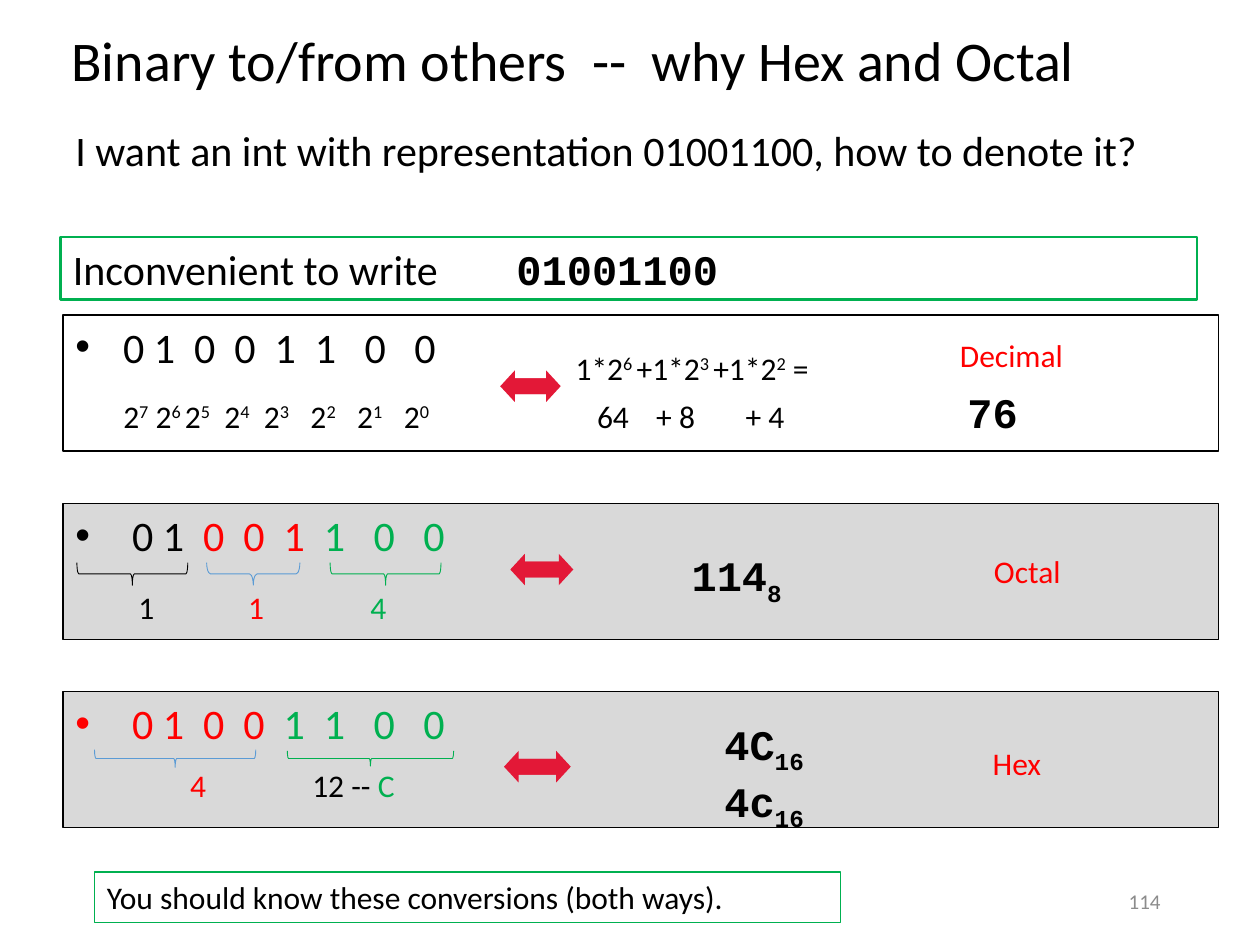
"""Build a slide on converting binary to decimal, octal and hexadecimal."""
import dataclasses

import pptx
import pptx.dml.color
import pptx.enum.shapes
import pptx.enum.text
import pptx.oxml
import pptx.oxml.ns
import pptx.util

SHAPES = pptx.enum.shapes.MSO_SHAPE
ALIGN = pptx.enum.text.PP_ALIGN
ANCHOR = pptx.enum.text.MSO_ANCHOR


@dataclasses.dataclass(frozen=True)
class Theme:
    black: str = "000000"
    red: str = "FF0000"
    green: str = "00B050"
    blue: str = "5B9BD5"
    gray: str = "D9D9D9"
    arrow: str = "E31837"
    muted: str = "8C8C8C"
    title: int = 32
    large: int = 24
    normal: int = 18
    small: int = 12
    sans: str = "Calibri"
    mono: str = "Courier New"


THEME = Theme()
INSET = 0.1
BAND_LEFT, BAND_TOP, BAND_WIDTH, BAND_HEIGHT, BAND_STEP = 0.5, 2.5, 9.17, 1.08, 1.495
ARROW_WIDTH, ARROW_HEIGHT = 0.42, 0.25


def run(text, size=THEME.normal, color=THEME.black, mono=False, base=0):
    font = {"size": pptx.util.Pt(size), "bold": mono, "name": THEME.mono if mono else THEME.sans}
    return text, font, color, base


def powers(*parts):
    return [run(part, base=30 * (index % 2)) for index, part in enumerate(parts)]


def mono(text, base=0):
    return run(text, THEME.large, mono=True, base=base)


def digits(text, color=THEME.black):
    return run(text, THEME.large, color)


def label(text, color=THEME.red):
    return [[run(text, color=color)]]


BANDS = [
    {
        "fill": None, "indent": 0.38, "arrows": (3.97, 4.03, 0.44),
        "digits": [digits("0 1  0  0  1  1   0   0")],
        "braces": [],
        "texts": [
            (0.98, 0.6, [powers("2", "7", " 2", "6 ", "2", "5", "  2", "4", "  2", "3",
                                "   2", "2", "   2", "1", "   2", "0")], ()),
            (4.57, 0.22, [powers("1*2", "6 ", "+1*2", "3 ", "+1*2", "2", " ="),
                          [run("\t64\t+ 8\t+ 4\t"), mono("76")]], (0.17, 0.64, 1.35, 3.11)),
            (7.62, 0.12, label("Decimal"), ()),
        ],
    },
    {
        "fill": THEME.gray, "indent": 0.45, "arrows": (4.05, 4.13, 0.4),
        "digits": [digits("0 1  "), digits("0  0  1  ", THEME.red),
                   digits("1   0   0", THEME.green)],
        "braces": [(1.05, 0.56, 0.88, 0.18, THEME.black, 0.083),
                   (2.01, 0.56, 0.74, 0.18, THEME.blue, 0.167),
                   (3.06, 0.56, 0.88, 0.18, THEME.green, 0.083)],
        "texts": [
            (1.1, 0.62, label("1", THEME.black), ()),
            (1.97, 0.62, label("1"), ()),
            (2.94, 0.62, label("4", THEME.green), ()),
            (5.49, 0.32, [[mono("114"), mono("8", -25)]], ()),
            (7.89, 0.34, label("Octal"), ()),
        ],
    },
    {
        "fill": THEME.gray, "indent": 0.45, "arrows": (4.0, 4.11, 0.47),
        "digits": [digits("0 1  0  0  ", THEME.red), digits("1  1   0   0", THEME.green)],
        "braces": [(1.39, 0.53, 1.28, 0.14, THEME.blue, 0.083),
                   (2.94, 0.53, 1.32, 0.12, THEME.green, 0.083)],
        "texts": [
            (1.51, 0.54, label("4"), ()),
            (2.48, 0.54, [[run("12 -- "), run("C", color=THEME.green)]], ()),
            (5.75, 0.16, [[mono(text), mono("16", -25)] for text in ("4C", "4c")], ()),
            (7.88, 0.37, label("Hex"), ()),
        ],
    },
]

BOXES = [
    ((0.47, -0.12, 9.17, 1.25), [run("Binary to/from others  --  why Hex and Octal", THEME.title)],
     None, {"line_spacing": 0.9}, ANCHOR.MIDDLE, ()),
    ((0.5, 0.94, 9.17, 0.5),
     [run("I want an int with representation 01001100, how to denote it?", THEME.large)],
     None, {}, ANCHOR.TOP, ()),
    ((0.48, 1.88, 9.02, 0.5), [run("Inconvenient to write\t", THEME.large), mono("01001100")],
     1.5, {}, ANCHOR.TOP, (3.52,)),
    ((0.75, 6.92, 5.92, 0.4), [run("You should know these conversions (both ways).")],
     0.75, {}, ANCHOR.TOP, ()),
    ((7.06, 6.95, 2.25, 0.4), [run("114", THEME.small, THEME.muted)],
     None, {"alignment": ALIGN.RIGHT}, ANCHOR.MIDDLE, ()),
]


def rgb(color):
    return pptx.dml.color.RGBColor.from_string(color)


def add_shape(slide, kind, box, fill=None, line=None, width=0.75):
    shape = slide.shapes.add_shape(kind, *map(pptx.util.Inches, box))
    shape.shadow.inherit = False
    for part, color in ((shape.fill, fill), (shape.line.fill, line)):
        if color:
            part.solid()
            part.fore_color.rgb = rgb(color)
        else:
            part.background()
    if line:
        shape.line.width = pptx.util.Pt(width)
    return shape


def add_child(properties, tag, **attributes):
    child = properties.makeelement(pptx.oxml.ns.qn(tag), attributes)
    properties.append(child)
    return child


def write(shape, paragraphs, formats=None, anchor=ANCHOR.TOP, tabs=()):
    frame = shape.text_frame
    frame.word_wrap = True
    frame.vertical_anchor = anchor
    for index, runs in enumerate(paragraphs):
        paragraph = frame.add_paragraph() if index else frame.paragraphs[0]
        for name, value in {"alignment": ALIGN.LEFT, **(formats or {})}.items():
            setattr(paragraph, name, value)
        if tabs:
            stops = add_child(paragraph._p.get_or_add_pPr(), "a:tabLst")
            for position in tabs:
                add_child(stops, "a:tab", pos=str(pptx.util.Inches(position)), algn="l")
        for text, font, color, base in runs:
            piece = paragraph.add_run()
            piece.text = text
            for name, value in font.items():
                setattr(piece.font, name, value)
            piece.font.color.rgb = rgb(color)
            if base:
                piece.font._element.set("baseline", str(base * 1000))


def add_text(slide, box, paragraphs, formats=None, anchor=ANCHOR.TOP, tabs=()):
    shape = slide.shapes.add_textbox(*map(pptx.util.Inches, box))
    write(shape, paragraphs, formats, anchor, tabs)


def add_band(slide, top, band):
    panel = add_shape(slide, SHAPES.RECTANGLE, (BAND_LEFT, top, BAND_WIDTH, BAND_HEIGHT),
                      band["fill"], THEME.black)
    write(panel, [band["digits"]], {"space_before": pptx.util.Pt(0.2 * THEME.large)})
    properties = panel.text_frame.paragraphs[0]._p.get_or_add_pPr()
    indent = pptx.util.Inches(band["indent"])
    for name, value in {"marL": indent, "indent": -indent}.items():
        properties.set(name, str(value))
    add_child(properties, "a:buFont", typeface="Arial")
    add_child(properties, "a:buChar", char="•")
    for left, offset, paragraphs, tabs in band["texts"]:
        box = (left - INSET, top + offset, 4.3 if tabs else 3.29 if left < 1 else 1.92, 0.4)
        add_text(slide, box, paragraphs, tabs=tabs)
    for center, offset, span, depth, color, curl in band["braces"]:
        box = (center - depth / 2, top + offset - span / 2, depth, span)
        brace = add_shape(slide, SHAPES.RIGHT_BRACE, box, line=color, width=0.5)
        brace.rotation = 90
        brace.adjustments[0] = curl
    *lefts, offset = band["arrows"]
    for left, rotation in zip(lefts, (180, 0)):
        arrow = add_shape(slide, SHAPES.RIGHT_ARROW,
                          (left, top + offset, ARROW_WIDTH, ARROW_HEIGHT), THEME.arrow)
        arrow.rotation = rotation
        arrow.adjustments[1] = 0.46


def main():
    presentation = pptx.Presentation()
    presentation.slide_width = pptx.util.Inches(10)
    presentation.slide_height = pptx.util.Inches(7.5)
    slide = presentation.slides.add_slide(presentation.slide_layouts[6])
    for index, band in enumerate(BANDS):
        add_band(slide, BAND_TOP + index * BAND_STEP, band)
    for box, runs, border, formats, anchor, tabs in BOXES:
        if border:
            frame = add_shape(slide, SHAPES.RECTANGLE, box, line=THEME.green, width=border)
            write(frame, [runs], formats, anchor, tabs)
        else:
            add_text(slide, box, [runs], formats, anchor, tabs)
    presentation.save("out.pptx")


if __name__ == "__main__":
    main()
